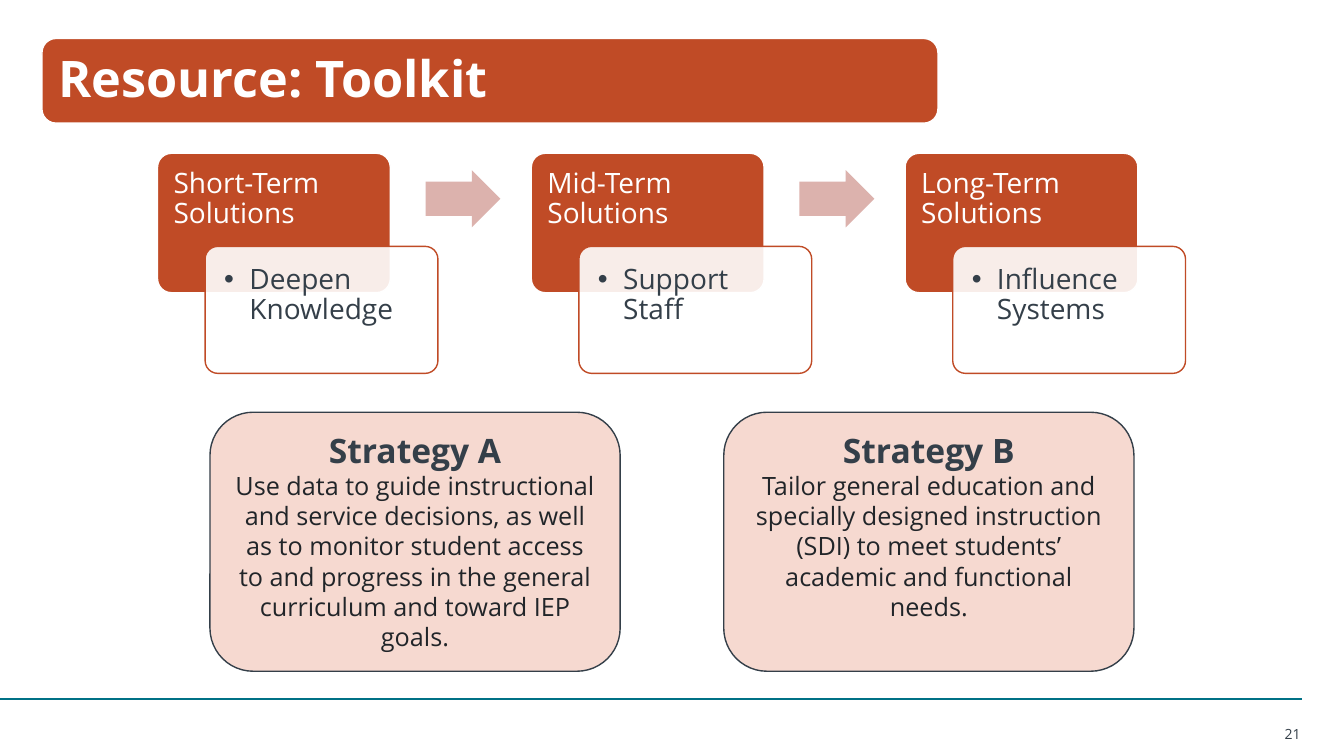
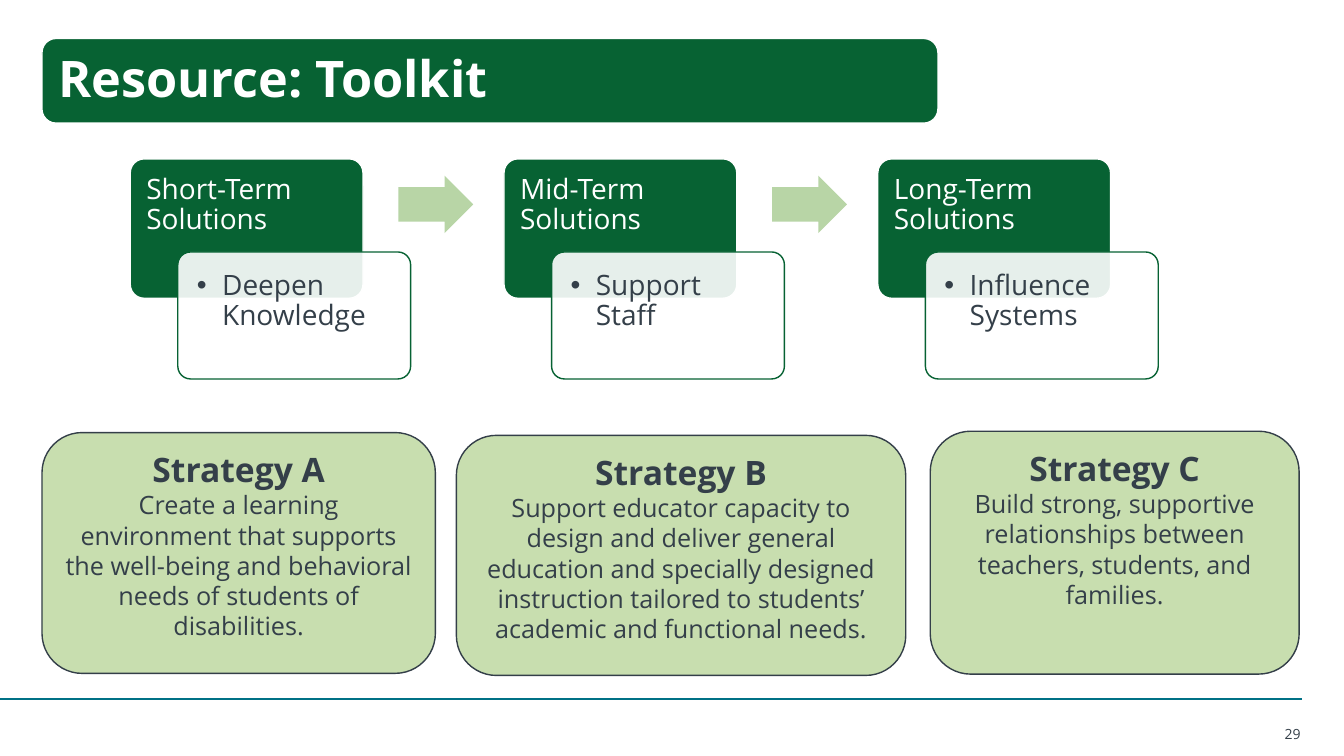
from lxml.etree import SubElement as Sub
from pptx import Presentation
from pptx.dml.color import RGBColor
from pptx.enum.shapes import MSO_CONNECTOR as Conn, MSO_SHAPE as Geo
from pptx.enum.text import MSO_ANCHOR as Anchor, MSO_AUTO_SIZE as Auto, PP_ALIGN as Align
from pptx.oxml.ns import qn
from pptx.util import Pt

FONT = "Open Sans"
INK, WHITE, TEAL = "343F49", "FFFFFF", "007186"
STEPS = [
    ("Short-Term Solutions", "Deepen Knowledge"),
    ("Mid-Term Solutions", "Support Staff"),
    ("Long-Term Solutions", "Influence Systems"),
]
PITCH = 267


def paint(target, color):
    target.fore_color.rgb = RGBColor.from_string(color)


def write(frame, text, size=20, color=INK, bold=False, align=Align.LEFT, lead=None, bullet=False):
    par = frame.paragraphs[0]
    if par.runs:
        par = frame.add_paragraph()
    if bullet:
        props = par._p.get_or_add_pPr()
        props.set("marL", str(Pt(18)))
        props.set("indent", str(-Pt(18)))
        Sub(props, qn("a:buFont"), typeface="Arial")
        Sub(props, qn("a:buChar"), char="•")
    par.alignment = align
    par.line_spacing = lead
    run = par.add_run()
    run.text = text
    font = run.font
    font.name, font.size, font.bold = FONT, Pt(size), bold
    font.color.rgb = RGBColor.from_string(color)


def fit(frame, left, top, right, base, anchor=Anchor.TOP, wrap=True):
    frame.margin_left, frame.margin_top = Pt(left), Pt(top)
    frame.margin_right, frame.margin_bottom = Pt(right), Pt(base)
    frame.vertical_anchor = anchor
    frame.word_wrap = wrap
    frame.auto_size = Auto.NONE


class Deck:
    def __init__(self):
        self.prs = Presentation()
        self.prs.slide_width, self.prs.slide_height = Pt(960), Pt(540)

    def start(self, title, number, main, soft, tint):
        self.main, self.soft, self.tint = main, soft, tint
        self.slide = self.prs.slides.add_slide(self.prs.slide_layouts[5])
        self.shapes = self.slide.shapes
        self.rule(0, 930, 499)
        self.title(title)
        self.number(number)

    def rule(self, left, right, y):
        line = self.shapes.add_connector(Conn.STRAIGHT, Pt(left), Pt(y), Pt(right), Pt(y))
        line.line.color.rgb = RGBColor.from_string(TEAL)
        line.line.width = Pt(1.5)
        Sub(line.element.spPr, qn("a:effectLst"))

    def shape(self, kind, box, fill, edge=None, adjust=()):
        item = self.shapes.add_shape(kind, *map(Pt, box))
        item.shadow.inherit = False
        item.fill.solid()
        paint(item.fill, fill)
        if edge:
            item.line.fill.solid()
            paint(item.line.fill, edge)
            item.line.width = Pt(1)
        else:
            item.line.fill.background()
        for i, value in enumerate(adjust):
            item.adjustments[i] = value
        return item

    def title(self, text):
        band = self.shape(Geo.ROUNDED_RECTANGLE, (30, 27.5, 640, 60.5), self.main, WHITE)
        title = self.shapes.title
        title.element.addprevious(band.element)
        title.left, title.top, title.width, title.height = map(Pt, (33, 30.5, 634, 54.5))
        fit(title.text_frame, 8.6, 8.6, 8.6, 8.6, Anchor.MIDDLE)
        write(title.text_frame, text, size=36, color=WHITE, bold=True, lead=0.9)

    def number(self, text):
        frame = self.shapes.add_textbox(*map(Pt, (916.5, 518.5, 12.5, 12))).text_frame
        fit(frame, 0, 0, 0, 0, Anchor.BOTTOM, False)
        write(frame, text, size=10, align=Align.RIGHT)

    def step(self, left, top, head, note):
        card = self.shape(Geo.ROUNDED_RECTANGLE, (left, top, 166.3, 99.6), self.main, WHITE, [0.1])
        fit(card.text_frame, 8.6, 8.6, 8.6, 36)
        write(card.text_frame, head, color=WHITE, lead=0.9)
        box = (left + 34, top + 66.5, 166.3, 90.7)
        panel = self.shape(Geo.ROUNDED_RECTANGLE, box, WHITE, self.main, [0.1])
        Sub(panel.element.find(".//" + qn("a:srgbClr")), qn("a:alpha"), val="90000")
        fit(panel.text_frame, 11, 11, 11, 11)
        write(panel.text_frame, note, lead=0.9, bullet=True)

    def steps(self, left, top):
        for i, (head, note) in enumerate(STEPS):
            x = left + i * PITCH
            self.step(x, top, head, note)
            if i < len(STEPS) - 1:
                self.shape(Geo.RIGHT_ARROW, (x + 191.5, top + 12, 53.5, 41), self.soft, adjust=[0.6, 0.5])

    def plan(self, box, head, body, color=INK):
        frame = self.shape(Geo.ROUNDED_RECTANGLE, box, self.tint, INK).text_frame
        fit(frame, 7.2, 3.6, 7.2, 3.6)
        write(frame, head, size=24, bold=True, align=Align.CENTER)
        write(frame, body, size=18, color=color, align=Align.CENTER)


def main():
    deck = Deck()
    deck.start("Resource: Toolkit", "21", "C04B26", "DCB2AD", "F6D9D0")
    deck.steps(112.5, 109.5)
    deck.plan((150, 294.5, 293, 185), "Strategy A",
              "Use data to guide instructional and service decisions, as well as to monitor "
              "student access to and progress in the general curriculum and toward IEP goals.",
              "212529")
    deck.plan((517, 294.5, 293, 185), "Strategy B",
              "Tailor general education and specially designed instruction (SDI) to meet "
              "students’ academic and functional needs.", "212529")

    deck.start("Resource: Toolkit", "29", "076233", "B8D5A6", "C8DEAF")
    deck.steps(93, 113.5)
    deck.plan((30, 309, 281, 172), "Strategy A",
              "Create a learning environment that supports the well-being and behavioral "
              "needs of students of disabilities.")
    deck.plan((326, 311, 321, 171.5), "Strategy B",
              "Support educator capacity to design and deliver general education and specially "
              "designed instruction tailored to students’ academic and functional needs.")
    deck.plan((664.5, 308, 263.5, 173.5), "Strategy C",
              "Build strong, supportive relationships between teachers, students, and families.")
    deck.prs.save("out.pptx")


if __name__ == "__main__":
    main()
